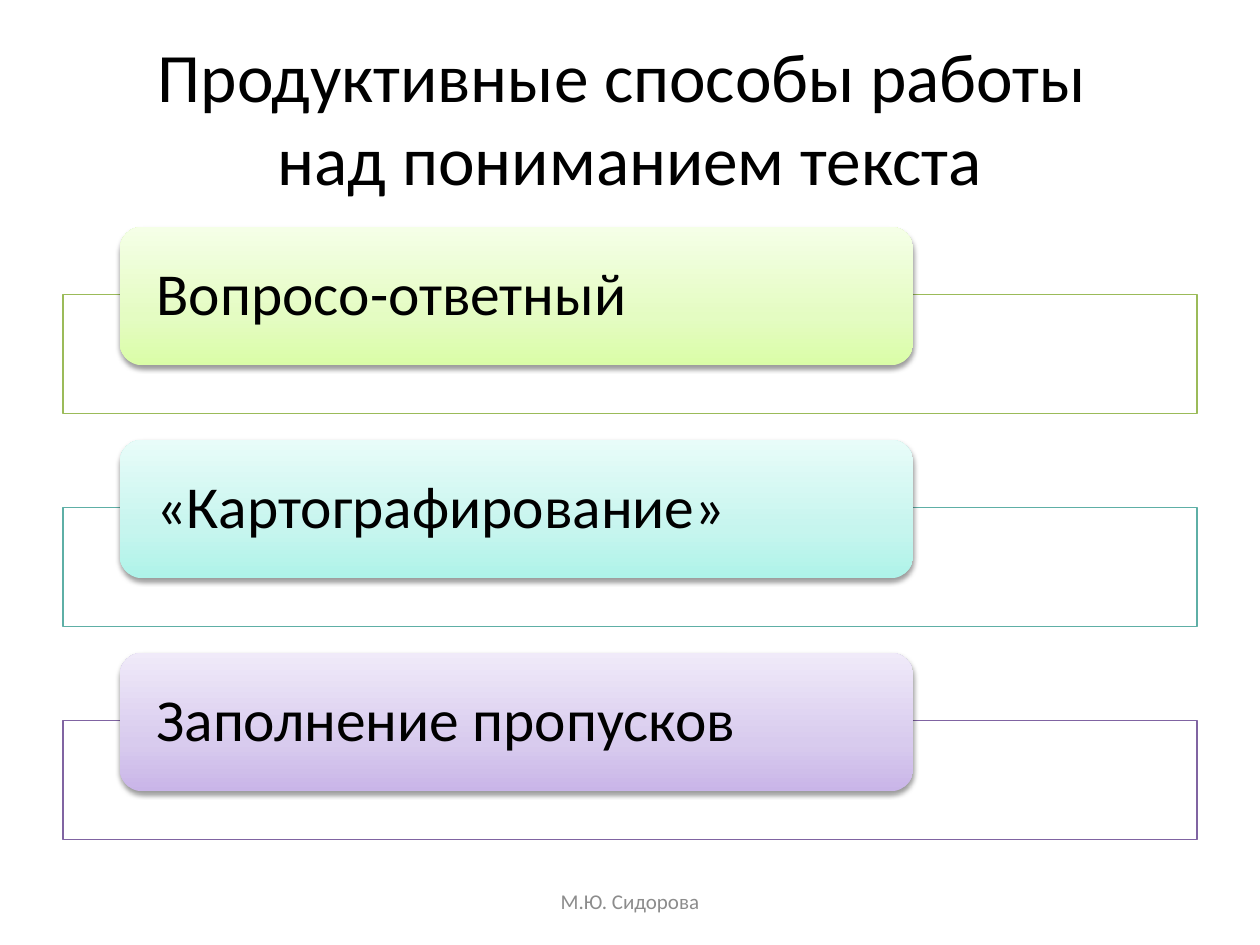
from copy import deepcopy

from lxml import etree
from pptx import Presentation
from pptx.dml.color import RGBColor
from pptx.enum.shapes import MSO_SHAPE
from pptx.enum.text import MSO_ANCHOR, MSO_AUTO_SIZE, PP_ALIGN
from pptx.oxml.ns import qn
from pptx.util import Pt

RECTANGLE, ROUNDED = MSO_SHAPE.RECTANGLE, MSO_SHAPE.ROUNDED_RECTANGLE
MIDDLE = MSO_ANCHOR.MIDDLE
LEFT, CENTER = PP_ALIGN.LEFT, PP_ALIGN.CENTER
NO_AUTOFIT = MSO_AUTO_SIZE.NONE

FONT = "Calibri"
COLORS = {"text": "000000", "footer": "8C8C8C", "frame": "FFFFFF", "shadow": "000000"}
# Label, frame line colour, gradient colours from bottom to top
METHODS = [
    ("Вопросо-ответный", "9BBB59", ("DAFDA7", "E4FCC2", "F5FFE7")),
    ("«Картографирование»", "5EAFA6", ("AEF3E9", "C6F5EE", "E8FCF9")),
    ("Заполнение пропусков", "8064A2", ("C9B5E8", "D8CBEE", "F0EAF9")),
]
GRADIENT_POSITIONS = (0, 0.35, 1)
FIRST_CARD_TOP = 129.6
ROW_PITCH = 121.7
FRAME_OFFSET = 38.9


def rgb(value):
    return RGBColor.from_string(value)


def write_lines(shape, lines, size, color, alignment):
    """Fill one paragraph, with a line break between the given lines."""
    frame = shape.text_frame
    frame.word_wrap = True
    frame.auto_size = NO_AUTOFIT
    frame.vertical_anchor = MIDDLE
    paragraph = frame.paragraphs[0]
    paragraph.alignment = alignment
    for index, line in enumerate(lines):
        if index:
            paragraph.add_line_break()
        run = paragraph.add_run()
        run.text = line
        run.font.name = FONT
        run.font.size = Pt(size)
        run.font.color.rgb = rgb(color)
    return paragraph


def add_title(slide):
    title = slide.shapes.title
    title.left, title.top, title.width, title.height = Pt(36), Pt(21.6), Pt(648), Pt(90)
    lines = ["Продуктивные способы работы ", "над пониманием текста"]
    write_lines(title, lines, 39.6, COLORS["text"], CENTER)


def add_frame(slide, top, line_color):
    frame = slide.shapes.add_shape(RECTANGLE, Pt(36), Pt(top), Pt(648), Pt(67.7))
    frame.shadow.inherit = False
    frame.fill.solid()
    frame.fill.fore_color.rgb = rgb(COLORS["frame"])
    color = frame.fill._xPr.find(qn("a:solidFill"))[0]
    etree.SubElement(color, qn("a:alpha"), val="90000")
    frame.line.color.rgb = rgb(line_color)
    frame.line.width = Pt(0.75)


def apply_gradient(shape, colors):
    fill = shape.fill
    fill.gradient()
    fill.gradient_angle = 90
    stop_list = shape.element.spPr.find(qn("a:gradFill")).find(qn("a:gsLst"))
    stop_list.insert(1, deepcopy(stop_list[0]))
    for stop, position, color in zip(fill.gradient_stops, GRADIENT_POSITIONS, colors):
        stop.position = position
        stop.color.rgb = rgb(color)


def apply_shadow(shape):
    shape.shadow.inherit = False
    effects = shape.element.spPr.find(qn("a:effectLst"))
    shadow = etree.SubElement(
        effects, qn("a:outerShdw"), blurRad=str(Pt(3.1)), dist=str(Pt(1.6)),
        dir="5400000", rotWithShape="0")
    color = etree.SubElement(shadow, qn("a:srgbClr"), val=COLORS["shadow"])
    etree.SubElement(color, qn("a:alpha"), val="38000")


def add_card(slide, top, label, gradient):
    card = slide.shapes.add_shape(ROUNDED, Pt(68.4), Pt(top), Pt(453.6), Pt(79.2))
    apply_gradient(card, gradient)
    card.line.fill.background()
    apply_shadow(card)
    frame = card.text_frame
    frame.margin_left = frame.margin_right = Pt(17.2)
    frame.margin_top = frame.margin_bottom = 0
    paragraph = write_lines(card, [label], 34, COLORS["text"], LEFT)
    paragraph.line_spacing = 0.9


def add_footer(slide):
    footer = slide.shapes.add_textbox(Pt(246), Pt(500.5), Pt(228), Pt(28.8))
    write_lines(footer, ["М.Ю. Сидорова"], 12, COLORS["footer"], CENTER)


def main():
    presentation = Presentation()
    presentation.slide_width, presentation.slide_height = Pt(720), Pt(540)
    slide = presentation.slides.add_slide(presentation.slide_layouts[5])
    add_title(slide)
    for row, (label, line_color, gradient) in enumerate(METHODS):
        top = FIRST_CARD_TOP + row * ROW_PITCH
        add_frame(slide, top + FRAME_OFFSET, line_color)
        add_card(slide, top, label, gradient)
    add_footer(slide)
    presentation.save("out.pptx")


if __name__ == "__main__":
    main()
